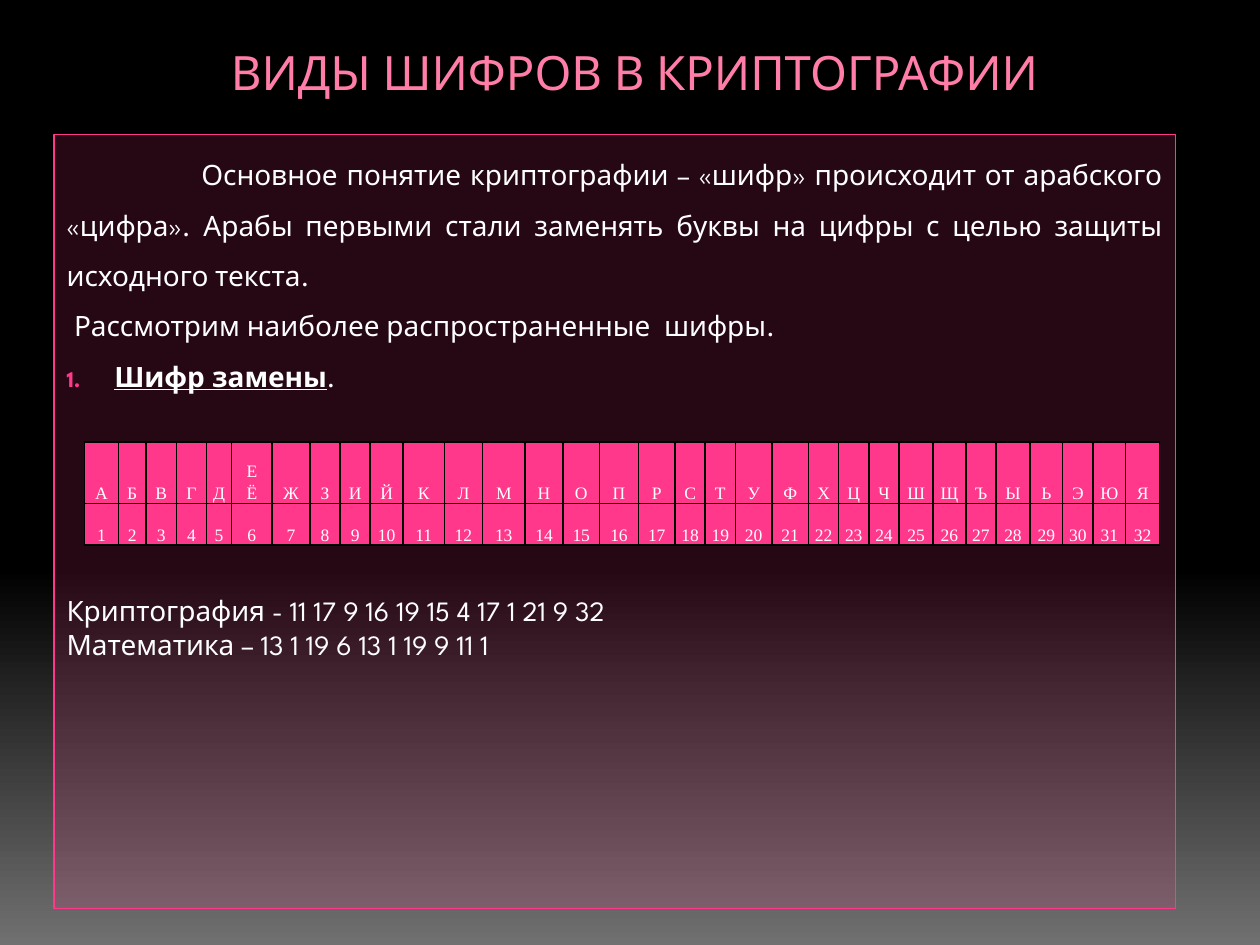
import pptx
import pptx.dml.color
import pptx.enum.shapes
import pptx.enum.text
import pptx.oxml
import pptx.oxml.ns
import pptx.util
from pptx.util import Inches

ALIGN = pptx.enum.text.PP_ALIGN
ANCHOR = pptx.enum.text.MSO_ANCHOR
NAMESPACE = pptx.oxml.ns.nsdecls("a")


class Theme:
    black, gray, white = "000000", "707070", "FFFFFF"
    pink, light_pink, dark_pink = "FF388C", "FF7DA7", "B12761"
    font, table_font = "League Spartan", "Times New Roman"
    title_size, body_size, table_size = 27, 16, 10


def rgb(value):
    return pptx.dml.color.RGBColor.from_string(value)


def apply(target, values):
    for name, value in values.items():
        setattr(target, name, value)


def add_xml(parent, xml, position=None):
    element = pptx.oxml.parse_xml(xml.replace(">", f" {NAMESPACE}>", 1)
                                  if "/>" not in xml.split(">")[0] + ">"
                                  else xml.replace("/>", f" {NAMESPACE}/>", 1))
    parent.insert(len(parent) if position is None else position, element)


class SlideBuilder:
    def __init__(self, slide, theme):
        self.slide = slide
        self.theme = theme

    def background(self):
        fill = self.slide.background.fill
        fill.gradient()
        fill.gradient_angle = 270
        stops = ((0.6, self.theme.black), (1, self.theme.gray))
        for stop, (position, color) in zip(fill.gradient_stops, stops):
            stop.position = position
            stop.color.rgb = rgb(color)

    def run(self, paragraph, text, size, font, color, **style):
        run = paragraph.add_run()
        run.text = text
        run.font.color.rgb = rgb(color)
        apply(run.font, {"size": pptx.util.Pt(size), "name": font, **style})
        return run

    def title(self, text, box):
        shape = self.slide.shapes.add_textbox(*map(Inches, box))
        frame = shape.text_frame
        apply(frame, {"word_wrap": True, "vertical_anchor": ANCHOR.BOTTOM})
        paragraph = frame.paragraphs[0]
        paragraph.alignment = ALIGN.CENTER
        run = self.run(paragraph, text, self.theme.title_size,
                       self.theme.font, self.theme.light_pink)
        # Thin letter outline
        add_xml(run.font._element,
                f'<a:ln w="6350"><a:solidFill><a:srgbClr val="{self.theme.dark_pink}"/>'
                '</a:solidFill></a:ln>', 0)

    def panel(self, box):
        shape = self.slide.shapes.add_shape(
            pptx.enum.shapes.MSO_SHAPE.RECTANGLE, *map(Inches, box))
        shape.shadow.inherit = False
        shape.fill.solid()
        shape.fill.fore_color.rgb = rgb(self.theme.pink)
        color = shape.fill._xPr.find(".//" + pptx.oxml.ns.qn("a:srgbClr"))
        add_xml(color, '<a:alpha val="15000"/>')
        shape.line.color.rgb = rgb(self.theme.pink)
        shape.line.width = pptx.util.Pt(0.75)
        apply(shape.text_frame, {"word_wrap": True, "vertical_anchor": ANCHOR.TOP})
        return shape.text_frame

    def paragraph(self, frame, runs, margin=0, indent=0, numbered=False, **values):
        first = frame.paragraphs[0]
        paragraph = frame.add_paragraph() if first.runs else first
        apply(paragraph, values)
        properties = paragraph._p.get_or_add_pPr()
        properties.set("marL", str(Inches(margin)))
        properties.set("indent", str(Inches(indent)))
        if numbered:
            for xml in (f'<a:buClr><a:srgbClr val="{self.theme.pink}"/></a:buClr>',
                        '<a:buSzPct val="80000"/>',
                        f'<a:buFont typeface="{self.theme.font}"/>',
                        '<a:buAutoNum type="arabicPeriod"/>'):
                add_xml(properties, xml)
        for text, style in runs:
            self.run(paragraph, text, self.theme.body_size, self.theme.font,
                     self.theme.white, **style)

    def cell(self, cell, text, open_side=None):
        margin = Inches(0.01)
        apply(cell, {"margin_left": margin, "margin_right": margin,
                     "margin_top": margin, "margin_bottom": 0,
                     "vertical_anchor": ANCHOR.BOTTOM})
        paragraph = cell.text_frame.paragraphs[0]
        paragraph.alignment = ALIGN.CENTER
        self.run(paragraph, text, self.theme.table_size,
                 self.theme.table_font, self.theme.white)
        stroke = f'<a:solidFill><a:srgbClr val="{self.theme.black}"/></a:solidFill>'
        for side in "LRTB":
            content = "<a:noFill/>" if side == open_side else stroke
            add_xml(cell._tc.get_or_add_tcPr(),
                    f'<a:ln{side} w="12700">{content}</a:ln{side}>')
        cell.fill.solid()
        cell.fill.fore_color.rgb = rgb(self.theme.pink)

    def cipher_table(self, letters, split_letter, widths, heights, box):
        """Letters over their numbers; one column holds a letter and its variant."""
        split_column = letters.index(split_letter[0])
        table = self.slide.shapes.add_table(
            len(heights), len(letters), *map(Inches, box)).table
        apply(table, {"first_row": False, "horz_banding": False})
        for row, height in zip(table.rows, heights):
            row.height = Inches(height)
        for index, (letter, width) in enumerate(zip(letters, widths)):
            table.columns[index].width = Inches(width)
            is_split = index == split_column
            top, middle, bottom = (table.cell(row, index) for row in range(3))
            if not is_split:
                top.merge(middle)
            self.cell(top, letter, "B" if is_split else None)
            self.cell(middle, split_letter[1] if is_split else "",
                      "T" if is_split else None)
            self.cell(bottom, str(index + 1))


def main():
    presentation = pptx.Presentation()
    presentation.slide_width = Inches(10)
    presentation.slide_height = Inches(7.5)
    slide = presentation.slides.add_slide(presentation.slide_layouts[6])
    builder = SlideBuilder(slide, Theme())
    builder.background()

    # Heading
    builder.title("ВИДЫ ШИФРОВ В КРИПТОГРАФИИ", (0.43, 0.29, 9.21, 0.55))

    # Explanation and encoded examples
    frame = builder.panel((0.43, 1.07, 8.9, 6.14))
    spaced = {"alignment": ALIGN.JUSTIFY, "line_spacing": 1.5}
    builder.paragraph(frame, [(
        "Основное понятие криптографии – «шифр» происходит от арабского «цифра». "
        "Арабы первыми стали заменять буквы на цифры с целью защиты исходного текста.",
        {})], indent=1.07, **spaced)
    builder.paragraph(frame, [("Рассмотрим наиболее распространенные  шифры.", {})],
                      indent=0.06, **spaced)
    builder.paragraph(frame, [("Шифр замены", {"bold": True, "underline": True}),
                              (".", {})],
                      margin=0.38, indent=-0.38, numbered=True, **spaced)
    examples = (("Криптография - 11 17 9 16 19 15 4 17 1 21 9 32", 115),
                ("Математика – 13 1 19 6 13 1 19 9 11 1", 0))
    for text, gap in examples:
        builder.paragraph(frame, [(text, {})], alignment=ALIGN.LEFT,
                          space_before=pptx.util.Pt(gap))

    # Substitution table
    widths = (0.27, 0.22, 0.24, 0.24, 0.2, 0.32, 0.3, 0.24,
              0.24, 0.26, 0.33, 0.3, 0.34, 0.3, 0.29, 0.31,
              0.29, 0.24, 0.24, 0.29, 0.29, 0.24, 0.24, 0.24,
              0.27, 0.26, 0.24, 0.27, 0.26, 0.24, 0.26, 0.27)
    builder.cipher_table("АБВГДЕЖЗИЙКЛМНОПРСТУФХЦЧШЩЪЫЬЭЮЯ", "ЕЁ", widths,
                         (0.31, 0.16, 0.33), (0.67, 3.51, 8.58, 0.8))
    presentation.save("out.pptx")


if __name__ == "__main__":
    main()
